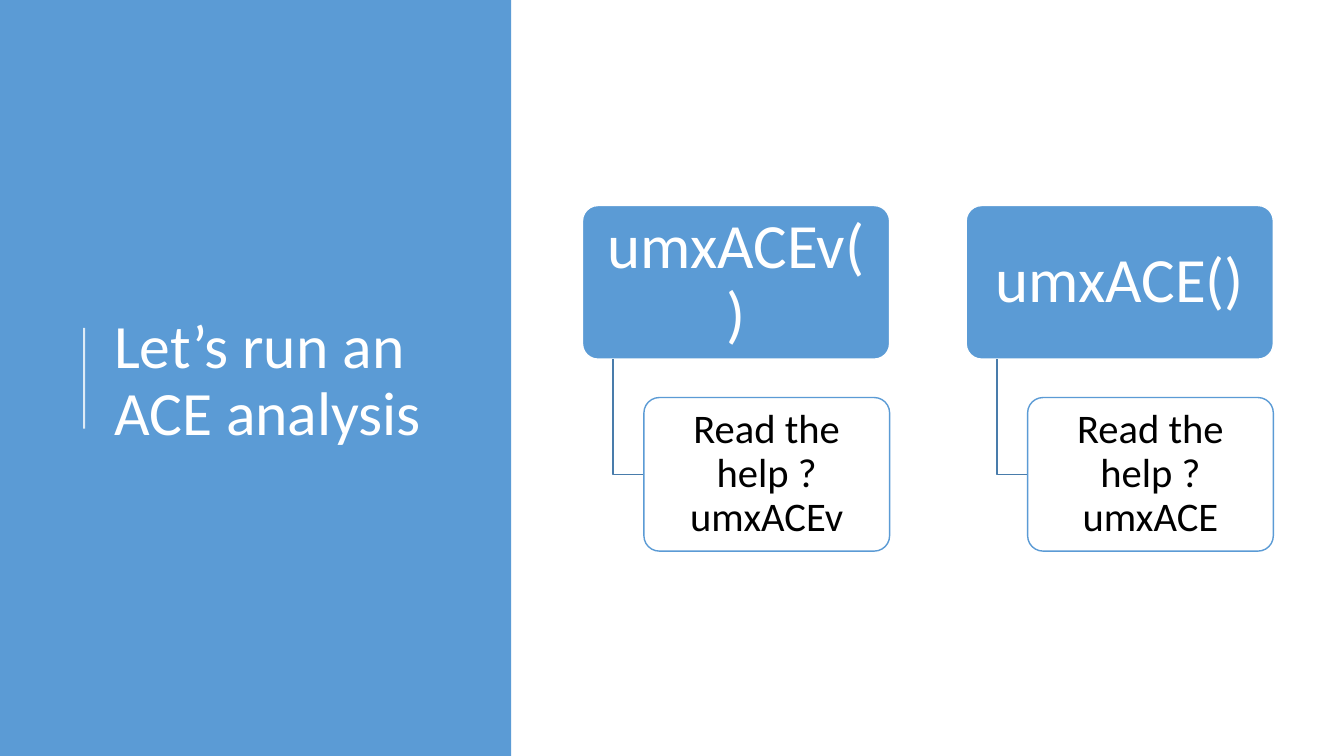
from dataclasses import dataclass

from lxml.etree import SubElement
from pptx import Presentation
from pptx.dml.color import RGBColor
from pptx.enum.shapes import MSO_CONNECTOR, MSO_SHAPE
from pptx.enum.text import MSO_ANCHOR as Anchor, PP_ALIGN as Align
from pptx.oxml.ns import qn
from pptx.util import Cm, Pt

BLUE = RGBColor(0x5B, 0x9B, 0xD5)
DARK_BLUE = RGBColor(0x49, 0x7C, 0xAB)
WHITE = RGBColor(0xFF, 0xFF, 0xFF)
BLACK = RGBColor(0, 0, 0)
FONT = "Calibri"

SLIDE_WIDTH, SLIDE_HEIGHT = 33.87, 19.05
FIRST_LEFT, BRANCH_TOP, BRANCH_PITCH = 14.68, 5.18, 9.67
BOX_WIDTH, BOX_HEIGHT = 7.74, 3.87
STEM_OFFSET, HELP_OFFSET = 0.1 * BOX_WIDTH, 0.2 * BOX_WIDTH
HELP_WIDTH = BOX_WIDTH - HELP_OFFSET
HELP_TOP = BRANCH_TOP + 1.25 * BOX_HEIGHT


@dataclass(frozen=True)
class BoxStyle:
    fill: RGBColor
    line: RGBColor
    text: RGBColor
    size: int
    inset_x: float
    inset_y: float
    opacity: int = 100


@dataclass(frozen=True)
class Branch:
    function: str
    help: str


FUNCTION_STYLE = BoxStyle(BLUE, WHITE, WHITE, 45, 0.34, 0.27)
HELP_STYLE = BoxStyle(WHITE, BLUE, BLACK, 29, 0.27, 0.22, 90)
BRANCHES = [
    Branch("umxACEv()", "Read the help ?umxACEv"),
    Branch("umxACE()", "Read the help ?umxACE"),
]


def set_opacity(shape, percent: int) -> None:
    color = next(shape.element.spPr.iter(qn("a:srgbClr")))
    SubElement(color, qn("a:alpha"), val=str(percent * 1000))


def format_text(shape, size: int, color: RGBColor, align: Align) -> None:
    frame = shape.text_frame
    frame.word_wrap = True
    frame.vertical_anchor = Anchor.MIDDLE
    paragraph = frame.paragraphs[0]
    paragraph.alignment = align
    paragraph.line_spacing = 0.9
    for run in paragraph.runs:
        run.font.name = FONT
        run.font.size = Pt(size)
        run.font.color.rgb = color


def add_panel(slide) -> None:
    panel = slide.shapes.add_shape(
        MSO_SHAPE.RECTANGLE, 0, 0, Cm(12.88), Cm(SLIDE_HEIGHT))
    panel.shadow.inherit = False
    panel.fill.solid()
    panel.fill.fore_color.rgb = BLUE
    panel.line.fill.background()


def add_divider(slide) -> None:
    divider = slide.shapes.add_connector(
        MSO_CONNECTOR.STRAIGHT, Cm(2.12), Cm(10.8), Cm(2.12), Cm(8.26))
    divider.line.color.rgb = WHITE
    divider.line.width = Pt(1.5)
    set_opacity(divider, 80)
    SubElement(divider.element.spPr, qn("a:effectLst"))


def place_title(slide, text: str) -> None:
    title = slide.shapes.title
    title.left, title.top = Cm(2.62), Cm(1.98)
    title.width, title.height = Cm(9.37), Cm(15.29)
    title.text_frame.text = text
    format_text(title, 44, WHITE, Align.LEFT)
    title.element.getparent().append(title.element)


def add_box(slide, left: float, top: float, width: float,
            text: str, style: BoxStyle) -> None:
    box = slide.shapes.add_shape(
        MSO_SHAPE.ROUNDED_RECTANGLE,
        Cm(left), Cm(top), Cm(width), Cm(BOX_HEIGHT))
    box.adjustments[0] = 0.1
    box.shadow.inherit = False
    box.fill.solid()
    box.fill.fore_color.rgb = style.fill
    if style.opacity < 100:
        set_opacity(box, style.opacity)
    box.line.color.rgb = style.line
    box.line.width = Pt(1)
    frame = box.text_frame
    frame.margin_left = frame.margin_right = Cm(style.inset_x)
    frame.margin_top = frame.margin_bottom = Cm(style.inset_y)
    frame.text = text
    format_text(box, style.size, style.text, Align.CENTER)


def add_elbow(slide, left: float) -> None:
    stem_x = Cm(left + STEM_OFFSET)
    middle_y = Cm(HELP_TOP + BOX_HEIGHT / 2)
    builder = slide.shapes.build_freeform(stem_x, Cm(BRANCH_TOP + BOX_HEIGHT))
    builder.add_line_segments(
        [(stem_x, middle_y), (Cm(left + HELP_OFFSET), middle_y)], close=False)
    elbow = builder.convert_to_shape()
    elbow.shadow.inherit = False
    elbow.fill.background()
    elbow.line.color.rgb = DARK_BLUE
    elbow.line.width = Pt(1)


def add_branch(slide, left: float, branch: Branch) -> None:
    add_box(slide, left, BRANCH_TOP, BOX_WIDTH, branch.function, FUNCTION_STYLE)
    add_elbow(slide, left)
    add_box(slide, left + HELP_OFFSET, HELP_TOP, HELP_WIDTH,
            branch.help, HELP_STYLE)


def main() -> None:
    presentation = Presentation()
    presentation.slide_width = Cm(SLIDE_WIDTH)
    presentation.slide_height = Cm(SLIDE_HEIGHT)
    title_only = presentation.slide_layouts.get_by_name("Title Only")
    slide = presentation.slides.add_slide(title_only)
    add_panel(slide)
    add_divider(slide)
    place_title(slide, "Let’s run an ACE analysis")
    for index, branch in enumerate(BRANCHES):
        add_branch(slide, FIRST_LEFT + index * BRANCH_PITCH, branch)
    presentation.save("out.pptx")


if __name__ == "__main__":
    main()
